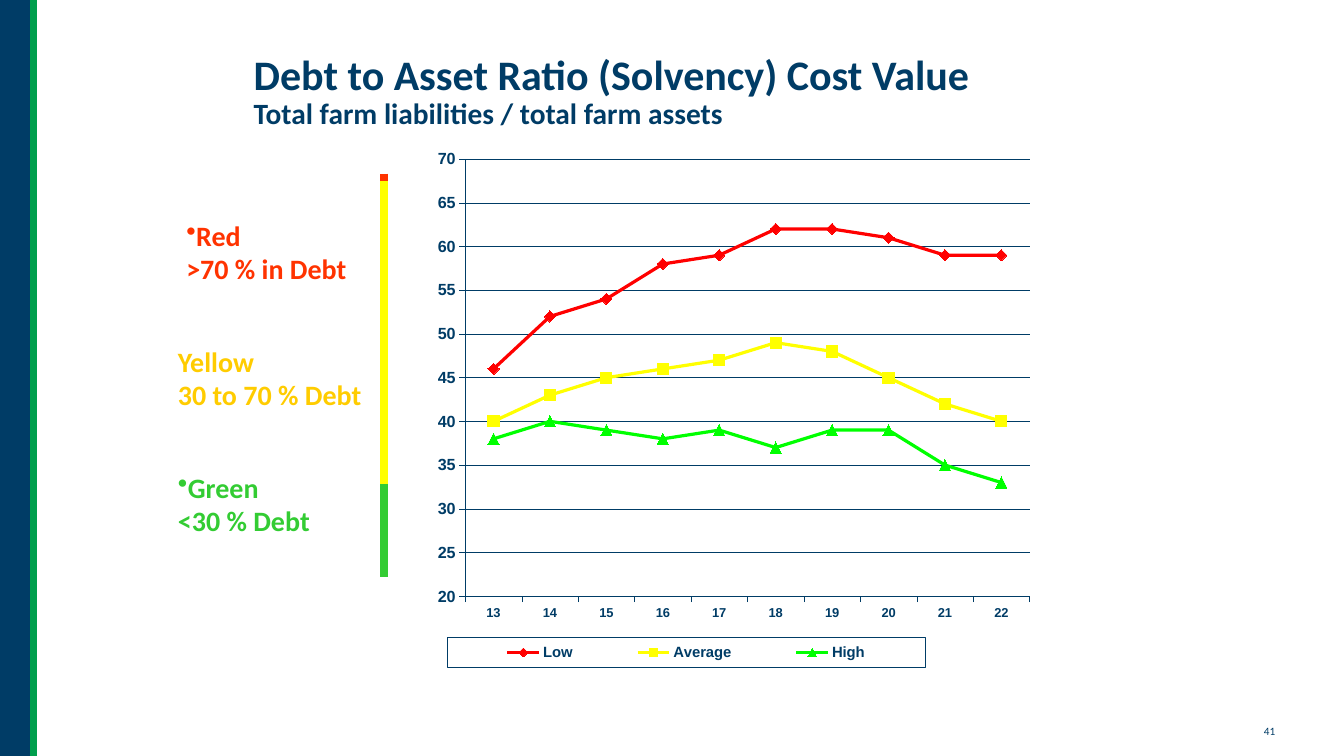
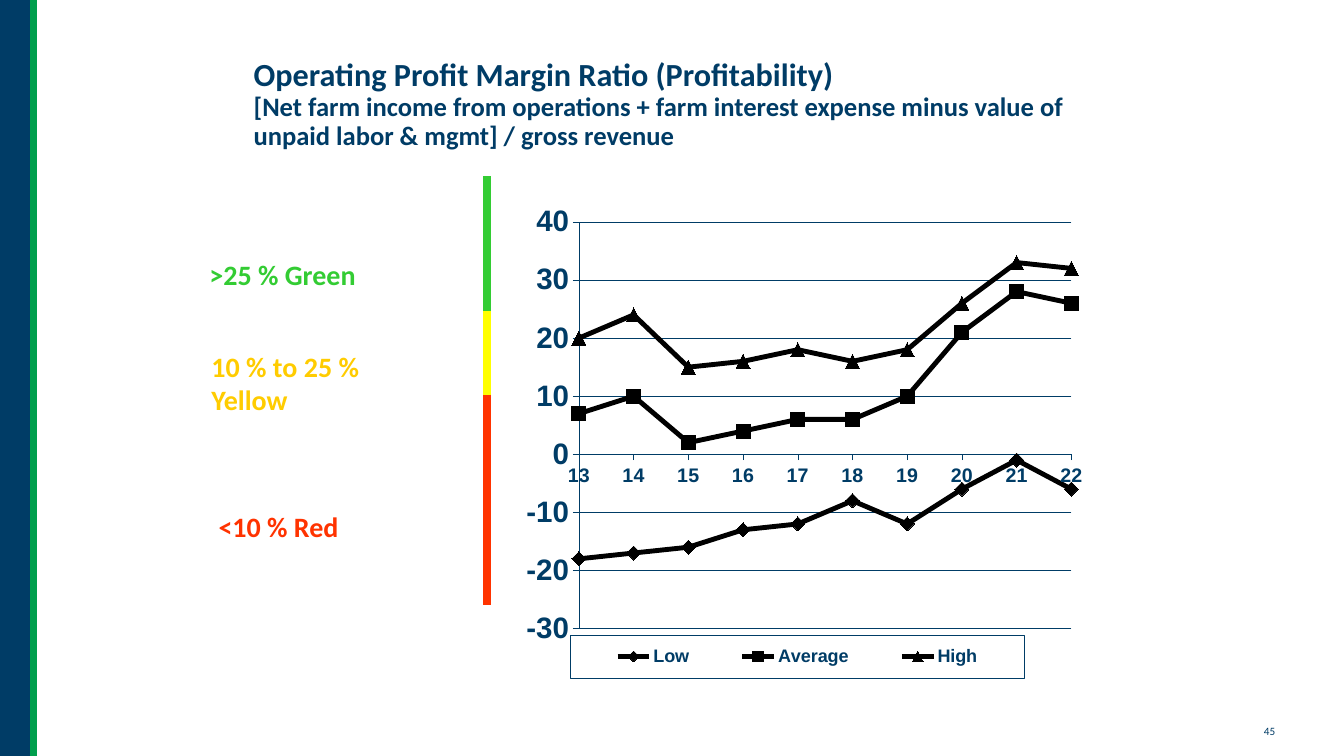
from dataclasses import dataclass

import pptx
import pptx.chart.data
import pptx.dml.color
import pptx.enum.chart
import pptx.enum.shapes
import pptx.enum.text
import pptx.oxml
import pptx.oxml.ns
import pptx.util

Pt = pptx.util.Pt
qn = pptx.oxml.ns.qn
MARKER = pptx.enum.chart.XL_MARKER_STYLE
LEGEND = pptx.enum.chart.XL_LEGEND_POSITION

COLORS = {
    "navy": "003C66", "edge": "009F4D", "black": "000000",
    "red": "FF3300", "yellow": "FFFF00", "amber": "FFCC00", "green": "33CC33",
    "low": "FF0000", "average": "FFFF00", "high": "00FF00",
}
SLIDE_WIDTH, SLIDE_HEIGHT = 960, 540
BAND_WIDTH = 24
YEARS = [str(year) for year in range(13, 23)]
MARKERS = {"Low": MARKER.DIAMOND, "Average": MARKER.SQUARE, "High": MARKER.TRIANGLE}

Box = tuple[float, float, float, float]


@dataclass
class Title:
    box: Box
    heading: str
    heading_size: float
    formula: str
    formula_size: float


@dataclass
class ZoneLabel:
    box: Box
    lines: list[str]
    color: str
    bullet: bool = False


@dataclass
class Scale:
    """Vertical bar of coloured zones: neighbouring stops bound each colour."""
    x: float
    stops: list[float]
    colors: list[str]


@dataclass
class RatioChart:
    box: Box
    values: dict[str, list[float]]
    colors: list[str]
    minimum: float
    maximum: float
    step: float
    value_size: float
    category_size: float
    legend_size: float
    line_width: float
    marker_size: int
    plot: Box
    legend: Box
    legend_position: LEGEND
    crossing: str


@dataclass
class RatioSlide:
    number: int
    title: Title
    labels: list[ZoneLabel]
    scale: Scale
    chart: RatioChart


SLIDES = [
    RatioSlide(
        41,
        Title((174, 18, 612, 96), "Debt to Asset Ratio (Solvency) Cost Value", 30,
              "Total farm liabilities / total farm assets", 21),
        [
            ZoneLabel((126, 152, 130, 55.5), ["Red", ">70 % in Debt"], "red", True),
            ZoneLabel((120, 242, 147, 55.5), ["Yellow", "30 to 70 % Debt"], "amber"),
            ZoneLabel((120, 332, 109, 55.5), ["Green", "<30 % Debt"], "green", True),
        ],
        Scale(274.3, [124, 129.6, 345.6, 412], ["red", "yellow", "green"]),
        RatioChart(
            (308, 102, 580, 388),
            {"Low": [46, 52, 54, 58, 59, 62, 62, 61, 59, 59],
             "Average": [40, 43, 45, 46, 47, 49, 48, 45, 42, 40],
             "High": [38, 40, 39, 38, 39, 37, 39, 39, 35, 33]},
            ["low", "average", "high"],
            20, 70, 5, 11.5, 9.2, 10.6, 2.3, 8,
            (0.042, 0.03, 0.695, 0.805), (0.02, 0.911, 0.588, 0.055),
            LEGEND.BOTTOM, "between"),
    ),
    RatioSlide(
        45,
        Title((174, 24, 612, 102), "Operating Profit Margin Ratio (Profitability)", 23,
              "[Net farm income from operations + farm interest expense minus value of "
              "unpaid labor & mgmt] / gross revenue", 19),
        [
            ZoneLabel((142.5, 180, 120, 31.5), [">25 % Green"], "green"),
            ZoneLabel((144, 245.5, 125, 55.5), ["10 % to 25 %", "Yellow"], "amber"),
            ZoneLabel((149, 360, 101, 31.5), ["<10 % Red"], "red"),
        ],
        Scale(348, [126, 222, 282, 432], ["green", "yellow", "red"]),
        RatioChart(
            (345, 130.3, 548, 371.5),
            {"Low": [-18, -17, -16, -13, -12, -8, -12, -6, -1, -6],
             "Average": [7, 10, 2, 4, 6, 6, 10, 21, 28, 26],
             "High": [20, 24, 15, 16, 18, 16, 18, 26, 33, 32]},
            ["black"] * 3,
            -30, 40, 10, 21.1, 14, 12.9, 3.5, 10,
            (0.125, 0.076, 0.642, 0.782), (0.114, 0.87, 0.592, 0.083),
            LEGEND.RIGHT, "midCat"),
    ),
]


def rgb(name: str) -> pptx.dml.color.RGBColor:
    return pptx.dml.color.RGBColor.from_string(COLORS[name])


def points(box: Box) -> list[pptx.util.Length]:
    return [Pt(length) for length in box]


def set_font(font, size: float, color: str, name: str = "Calibri", bold: bool = True) -> None:
    font.size, font.name, font.bold = Pt(size), name, bold
    font.color.rgb = rgb(color)


def set_line(line, color: str, width: float) -> None:
    line.color.rgb = rgb(color)
    line.width = Pt(width)


def chart_xml(content: str):
    """Parse one chart element; {ns} in the content becomes the namespaces."""
    return pptx.oxml.parse_xml(content.replace("{ns}", pptx.oxml.ns.nsdecls("c", "a")))


def add_vertical_line(slide, x: float, top: float, bottom: float, color: str, width: float) -> None:
    connector = slide.shapes.add_connector(
        pptx.enum.shapes.MSO_CONNECTOR.STRAIGHT, *points((x, top, x, bottom)))
    set_line(connector.line, color, width)
    properties = connector.element.find(qn("p:spPr"))
    properties.append(pptx.oxml.parse_xml(f"<a:effectLst {pptx.oxml.ns.nsdecls('a')}/>"))


def add_text(slide, box: Box, lines: list[str], size: float, color: str,
             bold: bool = True, bullet: bool = False) -> None:
    """Add unwrapped lines; a bullet goes on the first line only."""
    frame = slide.shapes.add_textbox(*points(box)).text_frame
    frame.word_wrap = False
    frame.auto_size = pptx.enum.text.MSO_AUTO_SIZE.SHAPE_TO_FIT_TEXT
    frame.vertical_anchor = pptx.enum.text.MSO_ANCHOR.BOTTOM
    frame.text = "\n".join(lines)
    for index, paragraph in enumerate(frame.paragraphs):
        if bullet and index == 0:
            properties = paragraph._p.get_or_add_pPr()
            properties.append(pptx.oxml.parse_xml(
                f"<a:buChar {pptx.oxml.ns.nsdecls('a')} char='•'/>"))
        set_font(paragraph.font, size, color, bold=bold)


def add_frame(slide, number: int) -> None:
    """Add the side band, its edge and the slide number."""
    band = slide.shapes.add_shape(
        pptx.enum.shapes.MSO_SHAPE.RECTANGLE, *points((0, 0, BAND_WIDTH, SLIDE_HEIGHT)))
    band.shadow.inherit = False
    band.fill.solid()
    band.fill.fore_color.rgb = rgb("navy")
    band.line.fill.background()
    add_vertical_line(slide, BAND_WIDTH, 0, SLIDE_HEIGHT, "edge", 4.5)
    add_text(slide, (895.7, 513.4, 24.5, 17), [str(number)], 8, "navy", bold=False)


def fill_title(slide, title: Title) -> None:
    shape = slide.shapes.title
    shape.left, shape.top, shape.width, shape.height = points(title.box)
    frame = shape.text_frame
    frame.word_wrap = True
    frame.auto_size = pptx.enum.text.MSO_AUTO_SIZE.NONE
    frame.vertical_anchor = pptx.enum.text.MSO_ANCHOR.MIDDLE
    paragraph = frame.paragraphs[0]
    paragraph.alignment = pptx.enum.text.PP_ALIGN.LEFT
    paragraph.line_spacing = 0.9
    set_font(paragraph.font, title.heading_size, "navy")
    paragraph.add_run().text = title.heading
    paragraph.add_line_break()
    formula = paragraph.add_run()
    formula.text = title.formula
    formula.font.size = Pt(title.formula_size)


def layout_xml(box: Box, inner: bool = False):
    target = '<c:layoutTarget val="inner"/>' if inner else ""
    modes = "".join(f'<c:{side}Mode val="edge"/>' for side in "xy")
    sizes = "".join(f'<c:{side} val="{value}"/>' for side, value in zip("xywh", box))
    return chart_xml(f"<c:layout {{ns}}><c:manualLayout>{target}{modes}{sizes}"
                     "</c:manualLayout></c:layout>")


def remove_children(parent, tag: str) -> None:
    for child in parent.findall(qn(tag)):
        parent.remove(child)


def format_axes(chart, ratio: RatioChart) -> None:
    sizes = ((chart.category_axis, ratio.category_size), (chart.value_axis, ratio.value_size))
    for axis, size in sizes:
        set_font(axis.tick_labels.font, size, "navy", "Arial")
        set_line(axis.format.line, "navy", 0.29)
        axis.major_tick_mark = pptx.enum.chart.XL_TICK_MARK.OUTSIDE
        axis.minor_tick_mark = pptx.enum.chart.XL_TICK_MARK.NONE
    value_axis = chart.value_axis
    value_axis.minimum_scale, value_axis.maximum_scale = ratio.minimum, ratio.maximum
    value_axis.major_unit = ratio.step
    value_axis.has_major_gridlines = True
    set_line(value_axis.major_gridlines.format.line, "navy", 0.29)
    element = chart.element.find(".//" + qn("c:valAx"))
    remove_children(element, "c:crossBetween")
    element.find(qn("c:crosses")).addnext(
        chart_xml(f'<c:crossBetween {{ns}} val="{ratio.crossing}"/>'))


def format_legend(chart, ratio: RatioChart) -> None:
    chart.has_legend = True
    legend = chart.legend
    legend.position = ratio.legend_position
    legend.include_in_layout = False
    set_font(legend.font, ratio.legend_size, "navy", "Arial")
    element = chart.element.find(".//" + qn("c:legend"))
    remove_children(element, "c:layout")
    element.find(qn("c:legendPos")).addnext(layout_xml(ratio.legend))
    element.find(qn("c:txPr")).addprevious(chart_xml(
        f'<c:spPr {{ns}}><a:ln w="{Pt(0.29)}"><a:solidFill>'
        f'<a:srgbClr val="{COLORS["navy"]}"/></a:solidFill></a:ln></c:spPr>'))


def add_ratio_chart(slide, ratio: RatioChart) -> None:
    data = pptx.chart.data.CategoryChartData()
    data.categories = YEARS
    for name, values in ratio.values.items():
        data.add_series(name, values)
    chart = slide.shapes.add_chart(
        pptx.enum.chart.XL_CHART_TYPE.LINE_MARKERS, *points(ratio.box), data).chart
    chart.has_title = False
    set_font(chart.font, ratio.value_size, "navy", "Arial")
    chart.plots[0].vary_by_categories = False
    for series, color in zip(chart.plots[0].series, ratio.colors):
        series.smooth = False
        set_line(series.format.line, color, ratio.line_width)
        series.marker.style = MARKERS[series.name]
        series.marker.size = ratio.marker_size
        series.marker.format.fill.solid()
        series.marker.format.fill.fore_color.rgb = rgb(color)
        set_line(series.marker.format.line, color, 0.75)
    format_axes(chart, ratio)
    format_legend(chart, ratio)
    plot_area = chart.element.find(".//" + qn("c:plotArea"))
    remove_children(plot_area, "c:layout")
    plot_area.insert(0, layout_xml(ratio.plot, inner=True))


def add_ratio_slide(presentation, content: RatioSlide) -> None:
    slide = presentation.slides.add_slide(presentation.slide_layouts.get_by_name("Title Only"))
    add_frame(slide, content.number)
    fill_title(slide, content.title)
    add_ratio_chart(slide, content.chart)
    for label in content.labels:
        add_text(slide, label.box, label.lines, 20, label.color, bullet=label.bullet)
    scale = content.scale
    for top, bottom, color in zip(scale.stops, scale.stops[1:], scale.colors):
        add_vertical_line(slide, scale.x, top, bottom, color, 6)


def main() -> None:
    presentation = pptx.Presentation()
    presentation.slide_width, presentation.slide_height = Pt(SLIDE_WIDTH), Pt(SLIDE_HEIGHT)
    for content in SLIDES:
        add_ratio_slide(presentation, content)
    presentation.save("out.pptx")


if __name__ == "__main__":
    main()
